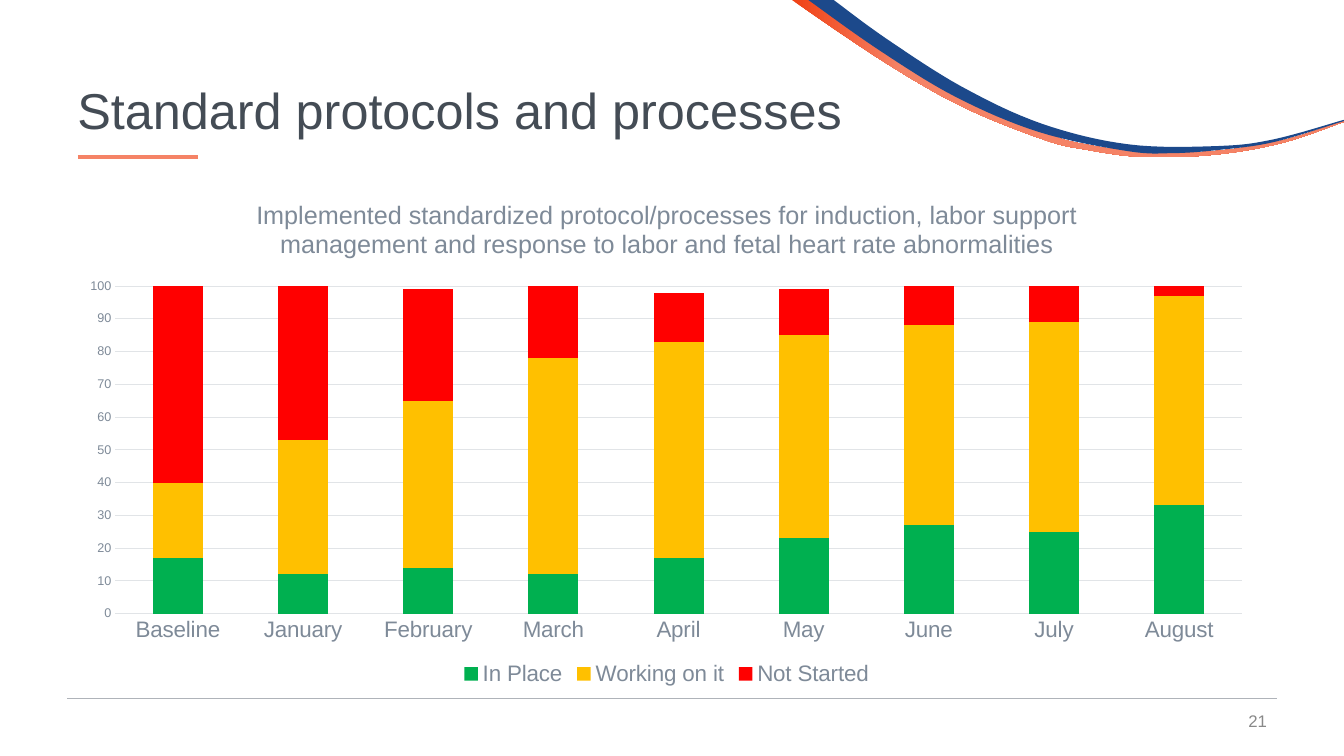
from dataclasses import dataclass

from lxml import etree
from pptx import Presentation
from pptx.chart.data import CategoryChartData
from pptx.dml.color import RGBColor
from pptx.enum.chart import XL_CHART_TYPE, XL_LEGEND_POSITION, XL_TICK_MARK
from pptx.enum.shapes import MSO_CONNECTOR
from pptx.enum.text import MSO_ANCHOR, PP_ALIGN
from pptx.oxml.ns import qn
from pptx.util import Cm, Pt

STACKED = XL_CHART_TYPE.COLUMN_STACKED
LEGEND_BOTTOM = XL_LEGEND_POSITION.BOTTOM
NO_TICK = XL_TICK_MARK.NONE
STRAIGHT = MSO_CONNECTOR.STRAIGHT
MIDDLE = MSO_ANCHOR.MIDDLE
LEFT, RIGHT = PP_ALIGN.LEFT, PP_ALIGN.RIGHT

Point = tuple[float, float]


@dataclass(frozen=True)
class Theme:
    font: str = "Arial"
    ink: str = "444C55"
    muted: str = "7E8A98"
    page: str = "898989"
    rule: str = "AFB3B9"
    grid: str = "E1E4E7"
    coral: str = "F58366"
    ember: str = "F04115"
    navy: str = "1C498B"
    green: str = "00B050"
    amber: str = "FFC000"
    red: str = "FF0000"
    heading_size: float = 36
    chart_title_size: float = 18
    label_size: float = 16
    page_size: float = 12
    scale_size: float = 9
    grid_width: float = 0.75


@dataclass(frozen=True)
class Ribbon:
    upper: list[Point]
    lower: list[Point]
    colors: list[str]


@dataclass(frozen=True)
class Rule:
    left: float
    right: float
    top: float
    color: str
    width: float


@dataclass(frozen=True)
class Label:
    text: str
    box: tuple[float, float, float, float]
    size: float
    color: str
    align: PP_ALIGN
    spacing: float


@dataclass(frozen=True)
class Status:
    name: str
    percents: list[int]
    color: str


THEME = Theme()

RIBBONS = [
    Ribbon(
        [(20.45, 0), (22.4, 1.37), (24.33, 2.51), (26.39, 3.38), (27.46, 3.66),
         (28.58, 3.81), (29.67, 3.86), (31.06, 3.76), (32.44, 3.51), (33.87, 3.05)],
        [(33.87, 3.07), (32.46, 3.56), (31.09, 3.84), (29.69, 3.96), (28.55, 3.94),
         (27.43, 3.78), (26.34, 3.53), (24.26, 2.69), (22.3, 1.57), (19.96, 0)],
        [THEME.ember, THEME.coral],
    ),
    Ribbon(
        [(21.01, 0), (22.33, 0.97), (24.23, 2.18), (26.26, 3.12),
         (28.45, 3.64), (30.71, 3.68), (32.11, 3.51), (33.87, 3.02)],
        [(33.87, 3.05), (32.11, 3.58), (30.71, 3.78), (29.57, 3.86), (28.42, 3.81),
         (26.19, 3.33), (24.08, 2.44), (22.12, 1.24), (20.37, 0)],
        [THEME.navy],
    ),
]
RULES = [
    Rule(1.7, 32.18, 17.6, THEME.rule, 0.5),
    Rule(1.96, 5, 3.96, THEME.coral, 2.5),
]
LABELS = [
    Label("21", (24.56, 17.65, 7.62, 1.02), THEME.page_size, THEME.page, RIGHT, 1),
    Label("Standard protocols and processes", (1.7, 1.02, 30.48, 3.68),
          THEME.heading_size, THEME.ink, LEFT, 0.9),
]
CHART_TITLE = ("Implemented standardized protocol/processes for induction, labor support "
               "management and response to labor and fetal heart rate abnormalities")
MONTHS = ["Baseline", "January", "February", "March", "April", "May", "June", "July", "August"]
STATUSES = [
    Status("In Place", [17, 12, 14, 12, 17, 23, 27, 25, 33], THEME.green),
    Status("Working on it", [23, 41, 51, 66, 66, 62, 61, 64, 64], THEME.amber),
    Status("Not Started", [60, 47, 34, 22, 15, 14, 12, 11, 3], THEME.red),
]


def rgb(color: str) -> RGBColor:
    return RGBColor.from_string(color)


def style_font(font, size: float, color: str) -> None:
    font.name = THEME.font
    font.size = Pt(size)
    font.bold = False
    font.color.rgb = rgb(color)


def style_line(line, color: str, width: float) -> None:
    line.color.rgb = rgb(color)
    line.width = Pt(width)


def smooth_edge(knots: list[Point], steps: int = 8) -> list[Point]:
    padded = [knots[0], *knots, knots[-1]]
    edge = [knots[0]]
    for before, start, end, after in zip(padded, padded[1:], padded[2:], padded[3:]):
        for step in range(1, steps + 1):
            t = step / steps
            x, y = (
                (2 * b + (c - a) * t + (2 * a - 5 * b + 4 * c - d) * t**2
                 + (3 * b - a - 3 * c + d) * t**3) / 2
                for a, b, c, d in zip(before, start, end, after)
            )
            edge.append((x, y))
    return edge


def draw_ribbon(slide, ribbon: Ribbon) -> None:
    outline = [(Cm(x), Cm(y)) for x, y in smooth_edge(ribbon.upper) + smooth_edge(ribbon.lower)]
    builder = slide.shapes.build_freeform(*outline[0])
    builder.add_line_segments(outline[1:], close=True)
    band = builder.convert_to_shape()
    band.shadow.inherit = False
    band.line.fill.background()
    if len(ribbon.colors) == 1:
        band.fill.solid()
        band.fill.fore_color.rgb = rgb(ribbon.colors[0])
        return
    band.fill.gradient()
    band.fill.gradient_angle = 0
    for stop, color, position in zip(band.fill.gradient_stops, ribbon.colors, (0, 0.2)):
        stop.color.rgb = rgb(color)
        stop.position = position


def draw_rule(slide, rule: Rule) -> None:
    connector = slide.shapes.add_connector(
        STRAIGHT, Cm(rule.left), Cm(rule.top), Cm(rule.right), Cm(rule.top))
    style_line(connector.line, rule.color, rule.width)
    etree.SubElement(connector._element.spPr, qn("a:effectLst"))


def draw_label(slide, label: Label) -> None:
    frame = slide.shapes.add_textbox(*map(Cm, label.box)).text_frame
    frame.word_wrap = True
    frame.vertical_anchor = MIDDLE
    paragraph = frame.paragraphs[0]
    paragraph.alignment = label.align
    paragraph.line_spacing = label.spacing
    run = paragraph.add_run()
    run.text = label.text
    style_font(run.font, label.size, label.color)


def place_plot(chart, **fractions: float) -> None:
    plot_area = chart._chartSpace.chart.plotArea
    for layout in plot_area.findall(qn("c:layout")):
        plot_area.remove(layout)
    layout = etree.Element(qn("c:layout"))
    manual = etree.SubElement(layout, qn("c:manualLayout"))
    settings = {"layoutTarget": "inner", "xMode": "edge", "yMode": "edge", **fractions}
    for tag, setting in settings.items():
        etree.SubElement(manual, qn(f"c:{tag}")).set("val", str(setting))
    plot_area.insert(0, layout)


def draw_progress_chart(slide) -> None:
    progress = CategoryChartData()
    progress.categories = MONTHS
    for status in STATUSES:
        progress.add_series(status.name, status.percents)
    chart = slide.shapes.add_chart(
        STACKED, Cm(1.7), Cm(4.5), Cm(30.2), Cm(12.9), progress).chart
    style_font(chart.font, 10, THEME.ink)
    chart.has_title = True
    title_run = chart.chart_title.text_frame.paragraphs[0].add_run()
    title_run.text = CHART_TITLE
    style_font(title_run.font, THEME.chart_title_size, THEME.muted)
    chart.has_legend = True
    chart.legend.position = LEGEND_BOTTOM
    chart.legend.include_in_layout = False
    style_font(chart.legend.font, THEME.label_size, THEME.muted)

    months, scale = chart.category_axis, chart.value_axis
    for axis, size in ((months, THEME.label_size), (scale, THEME.scale_size)):
        axis.major_tick_mark = axis.minor_tick_mark = NO_TICK
        style_font(axis.tick_labels.font, size, THEME.muted)
    style_line(months.format.line, THEME.grid, THEME.grid_width)
    scale.format.line.fill.background()
    scale.minimum_scale, scale.maximum_scale, scale.major_unit = 0, 100, 10
    style_line(scale.major_gridlines.format.line, THEME.grid, THEME.grid_width)

    plot = chart.plots[0]
    plot.gap_width, plot.overlap, plot.vary_by_categories = 150, 100, False
    for series, status in zip(plot.series, STATUSES):
        series.format.fill.solid()
        series.format.fill.fore_color.rgb = rgb(status.color)
    place_plot(chart, x=0.04, y=0.21, w=0.94, h=0.64)


def main() -> None:
    deck = Presentation()
    deck.slide_width, deck.slide_height = Cm(33.87), Cm(19.05)
    slide = deck.slides.add_slide(deck.slide_layouts[6])
    for ribbon in RIBBONS:
        draw_ribbon(slide, ribbon)
    for rule in RULES:
        draw_rule(slide, rule)
    for label in LABELS:
        draw_label(slide, label)
    draw_progress_chart(slide)
    deck.save("out.pptx")


if __name__ == "__main__":
    main()
